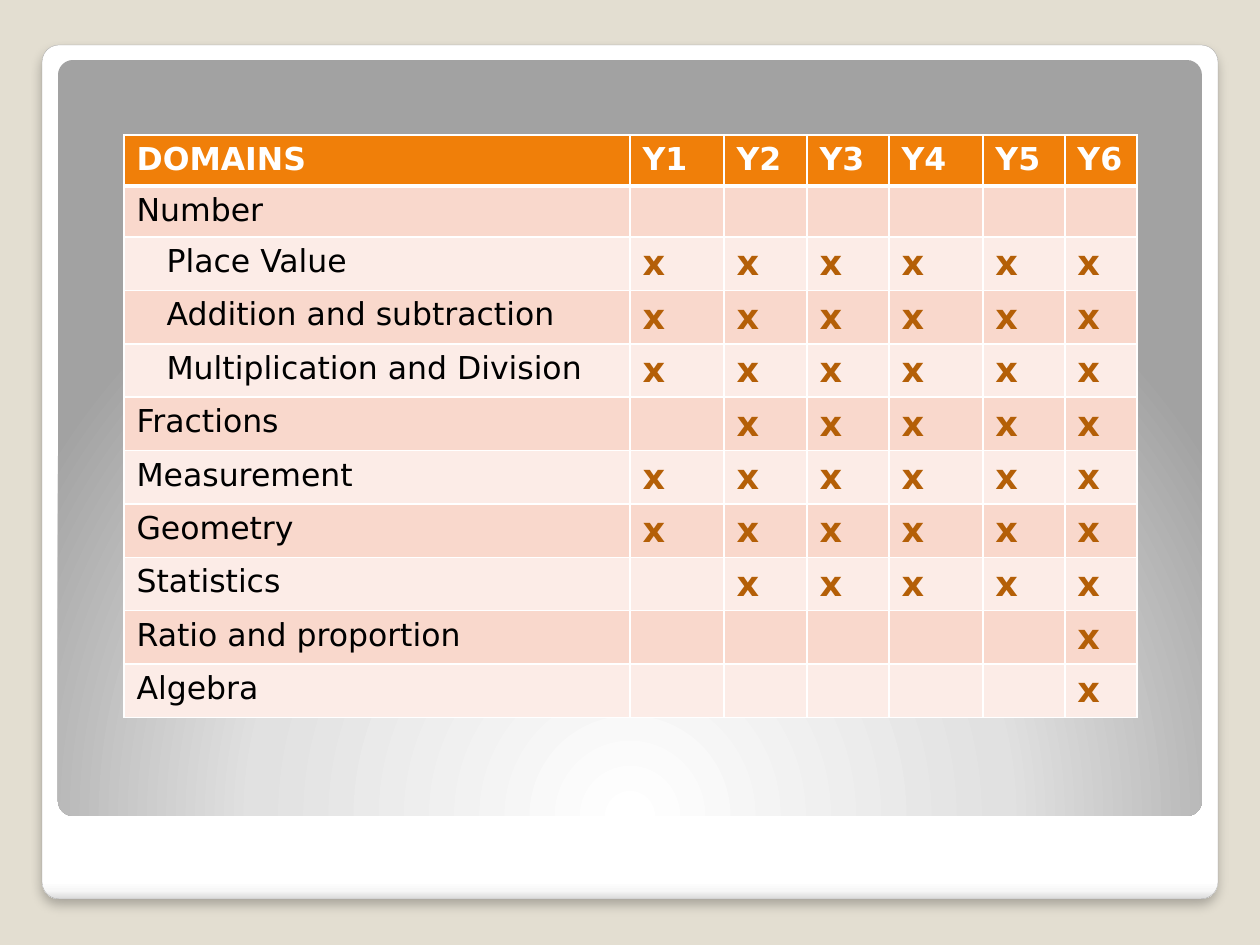
"""Build a slide with a table of mathematics domains by year group."""
from dataclasses import dataclass

import lxml.etree
import pptx
import pptx.dml.color
import pptx.enum.shapes
import pptx.oxml
import pptx.oxml.ns
import pptx.util

PX = 914400 / 126
FONT = "DejaVu Sans"
COLORS = {
    "backdrop": "E3DED1", "white": "FFFFFF", "edge": "A4A4A4", "heading": "F07F09",
    "odd": "F9D8CC", "even": "FCECE7", "label": "000000", "mark": "B45F07",
}
FORMATS = {
    "heading": {"name": FONT, "size": pptx.util.Pt(18), "bold": True},
    "label": {"name": FONT, "size": pptx.util.Pt(18), "bold": False},
    "mark": {"name": FONT, "size": pptx.util.Pt(20), "bold": True},
}
YEARS = ("Y1", "Y2", "Y3", "Y4", "Y5", "Y6")
COLUMN_WIDTHS = (506, 94, 83, 82, 94, 82, 72)
ROW_HEIGHT = 51
SUBDOMAIN_INDENT = 30


@dataclass(frozen=True)
class Panel:
    left: int
    top: int
    width: int
    height: int
    stops: tuple[tuple[int, str], ...]
    direction: str
    raised: bool = False


@dataclass(frozen=True)
class Domain:
    name: str
    years: tuple[str, ...] = ()
    nested: bool = False


PANELS = (
    Panel(42, 45, 1176, 854,
          ((0, "FFFFFF"), (98, "FFFFFF"), (99, "F7F7F7"), (100, "DADADA")),
          '<a:lin ang="5400000" scaled="0"/>', raised=True),
    Panel(58, 60, 1144, 756,
          ((0, "FFFFFF"), (55, "E1E1E1"), (100, "A2A2A2")),
          '<a:path path="circle">'
          '<a:fillToRect l="50000" t="175000" r="50000" b="-75000"/></a:path>'),
)
DOMAINS = (
    Domain("Number"),
    Domain("Place Value", YEARS, nested=True),
    Domain("Addition and subtraction", YEARS, nested=True),
    Domain("Multiplication and Division", YEARS, nested=True),
    Domain("Fractions", YEARS[1:]),
    Domain("Measurement", YEARS),
    Domain("Geometry", YEARS),
    Domain("Statistics", YEARS[1:]),
    Domain("Ratio and proportion", YEARS[5:]),
    Domain("Algebra", YEARS[5:]),
)


def px(length: int) -> int:
    """Turn pixels into EMU."""
    return round(length * PX)


def rgb(role: str) -> pptx.dml.color.RGBColor:
    """Look up a colour by its role."""
    return pptx.dml.color.RGBColor.from_string(COLORS[role])


def drawing(tag: str, content: str, attributes: str = "") -> lxml.etree._Element:
    """Parse one DrawingML element."""
    namespace = pptx.oxml.ns.nsdecls("a")
    return pptx.oxml.parse_xml(f"<a:{tag} {namespace} {attributes}>{content}</a:{tag}>")


def draw_panel(slide, panel: Panel) -> None:
    """Draw a rounded panel with a gradient and, if raised, an edge and a shadow."""
    card = slide.shapes.add_shape(
        pptx.enum.shapes.MSO_SHAPE.ROUNDED_RECTANGLE,
        px(panel.left), px(panel.top), px(panel.width), px(panel.height))
    card.adjustments[0] = 0.02
    card.shadow.inherit = False
    card.fill.gradient()
    stops = "".join(f'<a:gs pos="{position * 1000}"><a:srgbClr val="{color}"/></a:gs>'
                    for position, color in panel.stops)
    properties = card._element.spPr
    properties.replace(
        properties.find(pptx.oxml.ns.qn("a:gradFill")),
        drawing("gradFill", f"<a:gsLst>{stops}</a:gsLst>{panel.direction}", 'rotWithShape="1"'))
    if not panel.raised:
        card.line.fill.background()
        return
    card.line.color.rgb = rgb("edge")
    card.line.width = pptx.util.Pt(0.16)
    properties.replace(
        properties.find(pptx.oxml.ns.qn("a:effectLst")),
        drawing("effectLst",
                '<a:outerShdw blurRad="76200" dist="50800" dir="5400000" algn="tl" rotWithShape="0">'
                '<a:srgbClr val="000000"><a:alpha val="25000"/></a:srgbClr></a:outerShdw>'))


def fill_cell(cell, text: str, role: str, band: str, borders: dict[str, int]) -> None:
    """Write, colour and border one table cell."""
    cell.fill.solid()
    cell.fill.fore_color.rgb = rgb(band)
    properties = cell._tc.get_or_add_tcPr()
    for place, (side, points) in enumerate(borders.items()):
        properties.insert(place, drawing(
            f"ln{side}",
            f'<a:solidFill><a:srgbClr val="{COLORS["white"]}"/></a:solidFill>',
            f'w="{pptx.util.Pt(points)}"'))
    if text:
        run = cell.text_frame.paragraphs[0].add_run()
        run.text = text
        for attribute, value in FORMATS[role].items():
            setattr(run.font, attribute, value)
        run.font.color.rgb = rgb("white" if role == "heading" else role)


def draw_domains(slide) -> None:
    """Draw the table of domains and the years that teach them."""
    table = slide.shapes.add_table(
        len(DOMAINS) + 1, len(COLUMN_WIDTHS), px(124), px(135),
        px(sum(COLUMN_WIDTHS)), px(ROW_HEIGHT * (len(DOMAINS) + 1))).table
    for column, width in zip(table.columns, COLUMN_WIDTHS):
        column.width = px(width)
    for row in table.rows:
        row.height = px(ROW_HEIGHT)
    for column, heading in enumerate(("DOMAINS", *YEARS)):
        fill_cell(table.cell(0, column), heading, "heading", "heading",
                  {"L": 1, "R": 1, "T": 1, "B": 3})
    for row, domain in enumerate(DOMAINS, start=1):
        band = "odd" if row % 2 else "even"
        borders = {"L": 1, "R": 1, "T": 3 if row == 1 else 1, "B": 1}
        label = table.cell(row, 0)
        fill_cell(label, domain.name, "label", band, borders)
        if domain.nested:
            indent = label.text_frame.paragraphs[0]._p.get_or_add_pPr()
            indent.set("marL", str(px(SUBDOMAIN_INDENT)))
        for column, year in enumerate(YEARS, start=1):
            mark = "x" if year in domain.years else ""
            fill_cell(table.cell(row, column), mark, "mark", band, borders)


def main() -> None:
    """Build and save the slide."""
    deck = pptx.Presentation()
    deck.slide_width, deck.slide_height = px(1260), px(945)
    slide = deck.slides.add_slide(deck.slide_layouts[6])
    slide.background.fill.solid()
    slide.background.fill.fore_color.rgb = rgb("backdrop")
    for panel in PANELS:
        draw_panel(slide, panel)
    draw_domains(slide)
    deck.save("out.pptx")


if __name__ == "__main__":
    main()
